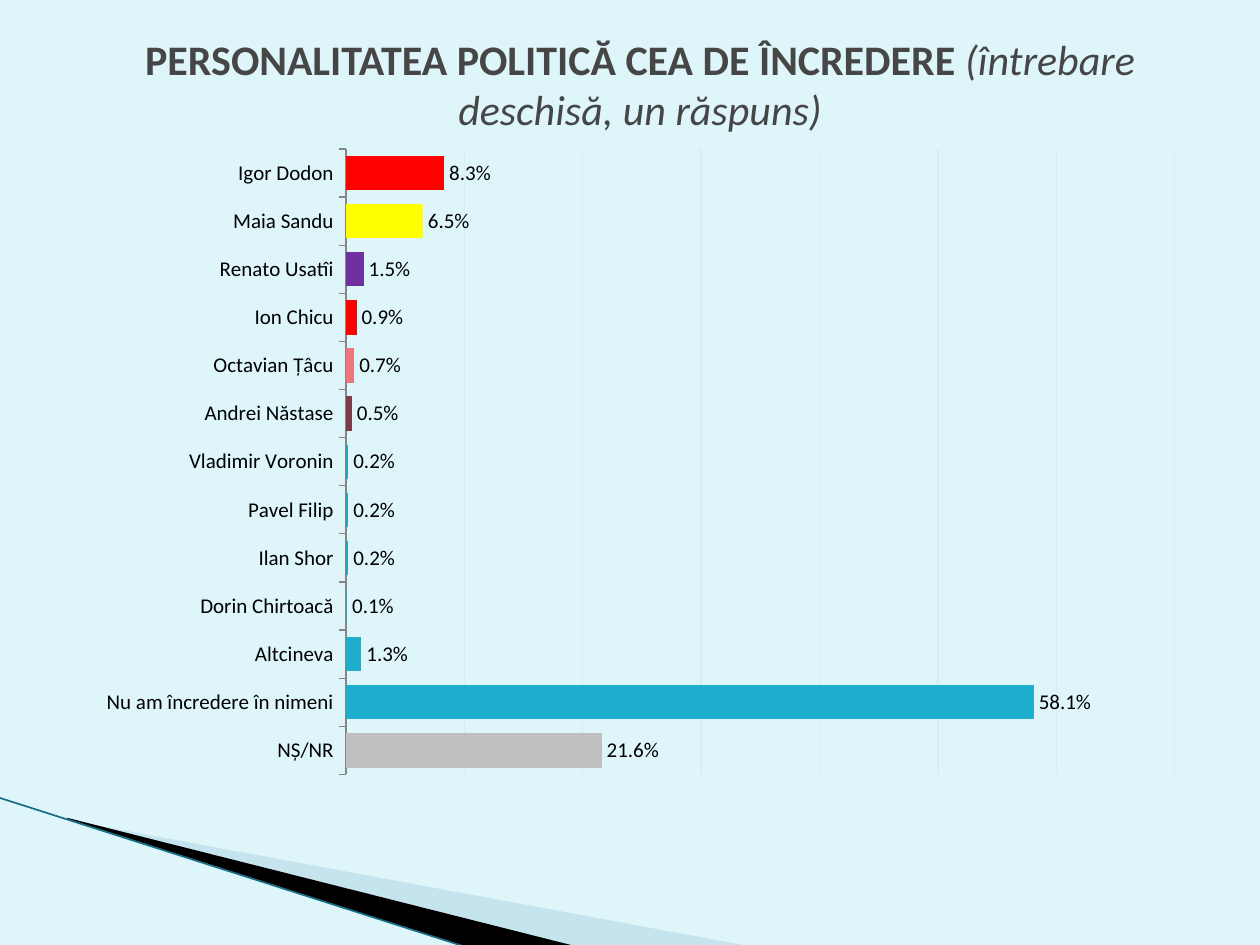
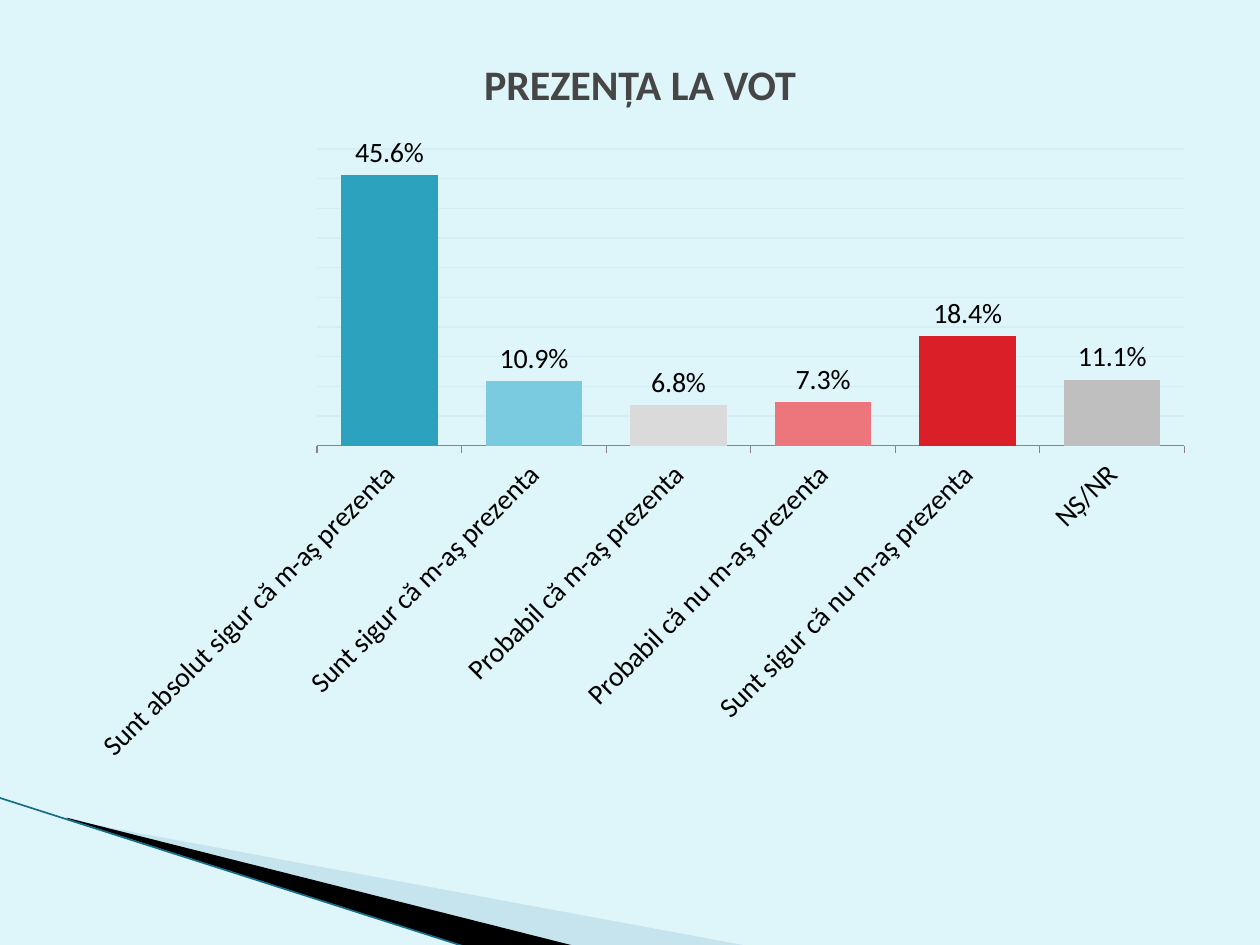
"""Build two survey slides, each with a title and a bar chart of shares."""
from dataclasses import dataclass
from typing import Optional

from lxml import etree
from pptx import Presentation
from pptx import util as u
from pptx.chart import data as chart_data
from pptx.dml.color import RGBColor
from pptx.enum import chart as charts, shapes, text
from pptx.oxml import ns

SCALE = 9144  # EMU per px, 100 px to the inch
FONT = "Calibri"
PERCENT = "0.0%"

PALE = RGBColor(0xDE, 0xF5, 0xFA)
GRID = RGBColor(0xD3, 0xEE, 0xF5)
MIST = RGBColor(0xA0, 0xCB, 0xDC)
EDGE = RGBColor(0x17, 0x6E, 0x8A)
BLACK = RGBColor(0x00, 0x00, 0x00)
SLATE = RGBColor(0x46, 0x46, 0x46)
AXIS = RGBColor(0x86, 0x86, 0x86)
TEAL = RGBColor(0x2D, 0xA2, 0xBF)
CYAN = RGBColor(0x1F, 0xAE, 0xCD)
SKY = RGBColor(0x7A, 0xCB, 0xE0)
SILVER = RGBColor(0xBF, 0xBF, 0xBF)
LIGHT = RGBColor(0xDA, 0xDA, 0xDA)
PINK = RGBColor(0xEC, 0x76, 0x7C)
CRIMSON = RGBColor(0xDA, 0x1F, 0x28)
RED = RGBColor(0xFF, 0x00, 0x00)
YELLOW = RGBColor(0xFF, 0xFF, 0x00)
PURPLE = RGBColor(0x70, 0x30, 0xA0)
WINE = RGBColor(0x7D, 0x3C, 0x4A)


@dataclass(frozen=True)
class Span:
    words: str
    bold: bool = False
    italic: bool = False


@dataclass(frozen=True)
class Band:
    points: tuple
    color: RGBColor
    opacity: int = 100


@dataclass(frozen=True)
class Bar:
    label: str
    share: float
    color: RGBColor


@dataclass(frozen=True)
class Survey:
    title: tuple
    kind: charts.XL_CHART_TYPE
    place: tuple
    bars: tuple
    size: int
    gap: int
    overlap: int
    top: float
    step: float
    turn: Optional[int] = None


BANDS = (
    Band(((55, 651), (595, 751), (456, 751), (55, 650)), MIST, 40),
    Band(((53, 649), (457, 751), (372, 752), (54, 650)), BLACK),
)

TRUST = Survey(
    title=(Span("PERSONALITATEA POLITICĂ CEA DE ÎNCREDERE ", bold=True),
           Span("(întrebare deschisă, un răspuns)", italic=True)),
    kind=charts.XL_CHART_TYPE.BAR_CLUSTERED,
    place=(67, 108, 883, 517),
    bars=(
        Bar("NȘ/NR", 0.216, SILVER),
        Bar("Nu am încredere în nimeni", 0.581, CYAN),
        Bar("Altcineva", 0.013, CYAN),
        Bar("Dorin Chirtoacă", 0.001, TEAL),
        Bar("Ilan Shor", 0.002, TEAL),
        Bar("Pavel Filip", 0.002, TEAL),
        Bar("Vladimir Voronin", 0.002, TEAL),
        Bar("Andrei Năstase", 0.005, WINE),
        Bar("Octavian Țâcu", 0.007, PINK),
        Bar("Ion Chicu", 0.009, RED),
        Bar("Renato Usatîi", 0.015, PURPLE),
        Bar("Maia Sandu", 0.065, YELLOW),
        Bar("Igor Dodon", 0.083, RED),
    ),
    size=12, gap=40, overlap=-10, top=0.7, step=0.1,
)

TURNOUT = Survey(
    title=(Span("PREZENȚA LA VOT", bold=True),),
    kind=charts.XL_CHART_TYPE.COLUMN_CLUSTERED,
    place=(58, 108, 900, 508),
    bars=(
        Bar("Sunt absolut sigur că m-aş prezenta", 0.456, TEAL),
        Bar("Sunt sigur că m-aş prezenta", 0.109, SKY),
        Bar("Probabil că m-aş prezenta", 0.068, LIGHT),
        Bar("Probabil că nu m-aş prezenta", 0.073, PINK),
        Bar("Sunt sigur că nu m-aş prezenta", 0.184, CRIMSON),
        Bar("NȘ/NR", 0.111, SILVER),
    ),
    size=16, gap=50, overlap=0, top=0.5, step=0.05, turn=-45,
)


def px(length: int) -> u.Emu:
    """Turn px into EMU."""
    return u.Emu(length * SCALE)


def draw_band(page, band: Band) -> None:
    """Draw one filled wedge of the corner decoration."""
    first, *rest = band.points
    builder = page.shapes.build_freeform(*first, scale=SCALE)
    builder.add_line_segments(rest, close=True)
    wedge = builder.convert_to_shape()
    wedge.shadow.inherit = False
    wedge.fill.solid()
    wedge.fill.fore_color.rgb = band.color
    wedge.line.fill.background()
    if band.opacity < 100:
        color = wedge._element.spPr.find(".//" + ns.qn("a:srgbClr"))
        alpha = etree.SubElement(color, ns.qn("a:alpha"))
        alpha.set("val", str(band.opacity * 1000))


def draw_corner(page) -> None:
    """Draw the wedges and the thin edge at the bottom left."""
    for band in BANDS:
        draw_band(page, band)
    edge = page.shapes.add_connector(
        shapes.MSO_CONNECTOR.STRAIGHT, px(-1), px(633), px(371), px(752))
    edge.line.color.rgb = EDGE
    edge.line.width = u.Pt(0.95)
    etree.SubElement(edge._element.spPr, ns.qn("a:effectLst"))


def draw_title(page, spans: tuple) -> None:
    """Write the centred title run by run."""
    box = page.shapes.add_textbox(px(58), px(25), px(900), px(83))
    frame = box.text_frame
    frame.word_wrap = True
    frame.vertical_anchor = text.MSO_ANCHOR.MIDDLE
    para = frame.paragraphs[0]
    para.alignment = text.PP_ALIGN.CENTER
    for span in spans:
        run = para.add_run()
        run.text = span.words
        run.font.name = FONT
        run.font.size = u.Pt(24)
        run.font.bold = span.bold
        run.font.italic = span.italic
        run.font.color.rgb = SLATE


def style_axes(chart, survey: Survey) -> None:
    """Hide the value axis, keep its grid and style the category axis."""
    values = chart.value_axis
    values.minimum_scale = 0
    values.maximum_scale = survey.top
    values.major_unit = survey.step
    values.visible = False
    values.has_major_gridlines = True
    values.major_gridlines.format.line.color.rgb = GRID
    values.major_gridlines.format.line.width = u.Pt(0.75)
    values.tick_labels.number_format = PERCENT
    values.tick_labels.number_format_is_linked = False
    names = chart.category_axis
    names.major_tick_mark = charts.XL_TICK_MARK.OUTSIDE
    names.format.line.color.rgb = AXIS
    names.format.line.width = u.Pt(0.75)
    names.tick_labels.font.size = u.Pt(survey.size)
    if survey.turn is not None:
        body = names._element.find(ns.qn("c:txPr")).find(ns.qn("a:bodyPr"))
        body.set("rot", str(survey.turn * 60000))
        body.set("vert", "horz")


def draw_chart(page, survey: Survey) -> None:
    """Add the chart with one colour for each bar."""
    table = chart_data.CategoryChartData(number_format=PERCENT)
    table.categories = [bar.label for bar in survey.bars]
    table.add_series("Series 1", [bar.share for bar in survey.bars])
    chart = page.shapes.add_chart(
        survey.kind, *map(px, survey.place), table).chart
    chart.has_legend = False
    chart.has_title = False
    chart.font.name = FONT
    chart.font.size = u.Pt(survey.size)
    chart.font.color.rgb = BLACK
    style_axes(chart, survey)
    plot = chart.plots[0]
    plot.vary_by_categories = False
    plot.gap_width = survey.gap
    plot.overlap = survey.overlap
    plot.has_data_labels = True
    labels = plot.data_labels
    labels.show_value = True
    labels.number_format = PERCENT
    labels.number_format_is_linked = False
    labels.position = charts.XL_LABEL_POSITION.OUTSIDE_END
    series = plot.series[0]
    series.invert_if_negative = False
    series.format.fill.solid()
    series.format.fill.fore_color.rgb = TEAL
    for index, bar in enumerate(survey.bars):
        if bar.color != TEAL:
            fill = series.points[index].format.fill
            fill.solid()
            fill.fore_color.rgb = bar.color


def main() -> None:
    """Build and save the deck."""
    deck = Presentation()
    deck.slide_width, deck.slide_height = px(1000), px(750)
    backdrop = deck.slide_master.background.fill
    backdrop.solid()
    backdrop.fore_color.rgb = PALE
    for survey in (TRUST, TURNOUT):
        page = deck.slides.add_slide(deck.slide_layouts[6])
        draw_corner(page)
        draw_title(page, survey.title)
        draw_chart(page, survey)
    deck.save("out.pptx")


if __name__ == "__main__":
    main()
